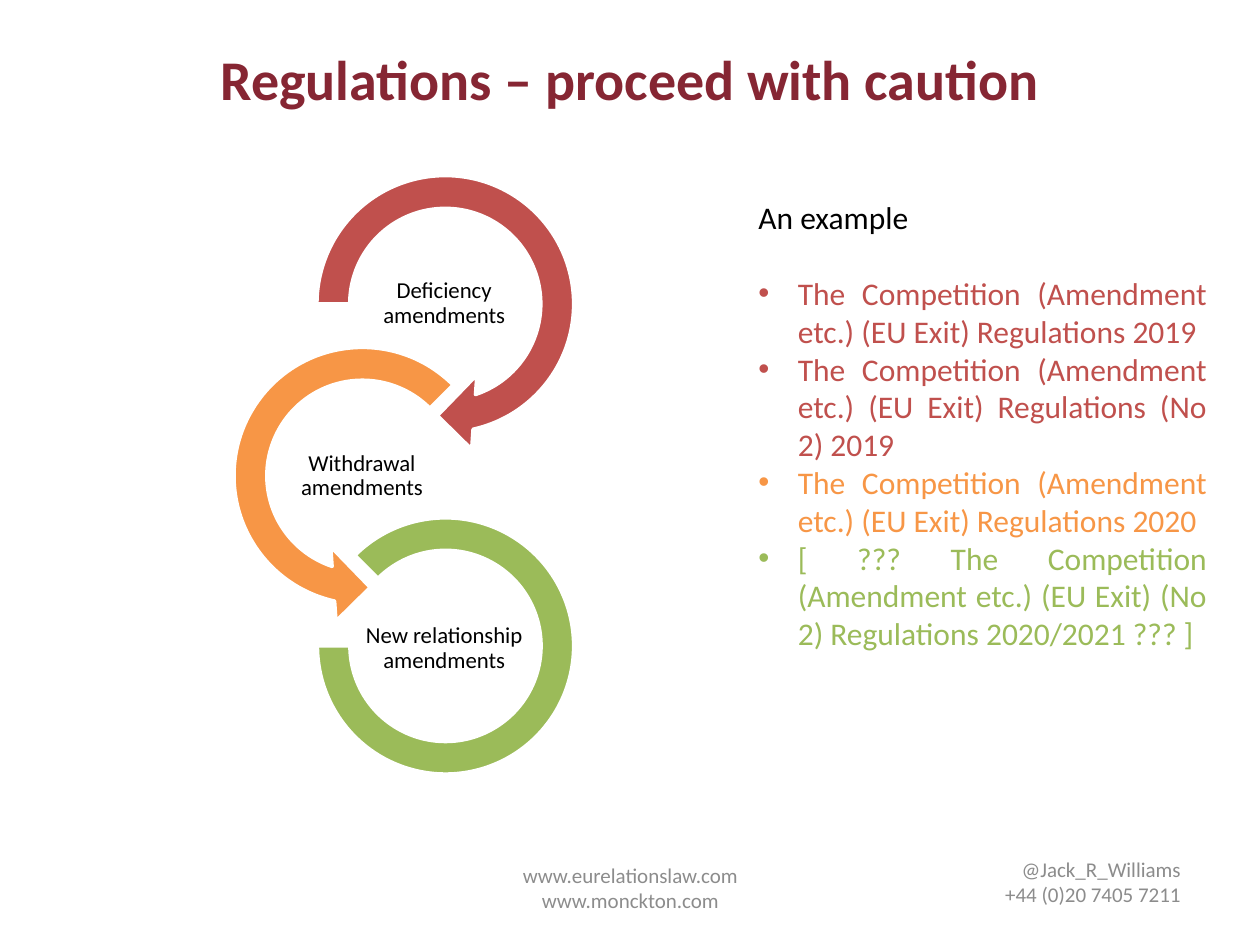
from lxml.etree import SubElement
from pptx import Presentation
from pptx.dml.color import RGBColor
from pptx.enum.shapes import MSO_SHAPE
from pptx.enum.text import MSO_ANCHOR, MSO_AUTO_SIZE, PP_ALIGN
from pptx.oxml.ns import qn
from pptx.util import Pt

FONT = "Calibri"
MAROON = RGBColor(0x86, 0x26, 0x33)
RED = RGBColor(0xC0, 0x50, 0x4D)
ORANGE = RGBColor(0xF7, 0x96, 0x46)
GREEN = RGBColor(0x9B, 0xBB, 0x59)
GREY = RGBColor(0x8C, 0x8C, 0x8C)
BLACK = RGBColor(0, 0, 0)
WHITE = RGBColor(0xFF, 0xFF, 0xFF)

LABEL_TOP, LABEL_STEP = 149.8, 98.6
STAGES = [
    ("Deficiency amendments", 206.6, MSO_SHAPE.CIRCULAR_ARROW, RED,
     (169.2, 88.4, 170.6), (0.11, 11.42, 45, 108, 0.125)),
    ("Withdrawal amendments", 159.6, MSO_SHAPE.LEFT_CIRCULAR_ARROW, ORANGE,
     (121.8, 186.6, 170.6), (0.11, 11.42, 63, 189, 0.125)),
    ("New relationship amendments", 206.6, MSO_SHAPE.BLOCK_ARC, GREEN,
     (181.4, 295.9, 146.4), (135, 108, 0.127)),
]
REGULATIONS = [
    ("The Competition (Amendment etc.) (EU Exit) Regulations 2019", RED),
    ("The Competition (Amendment etc.) (EU Exit) Regulations (No 2) 2019", RED),
    ("The Competition (Amendment etc.) (EU Exit) Regulations 2020", ORANGE),
    ("[ ??? The Competition (Amendment etc.) (EU Exit) (No 2) "
     "Regulations 2020/2021 ??? ]", GREEN),
]


def place(shape, left, top, width, height):
    """Move and size a shape, in points."""
    shape.left, shape.top = Pt(left), Pt(top)
    shape.width, shape.height = Pt(width), Pt(height)


def format_paragraph(paragraph, size, color, alignment, bold=False):
    """Set the alignment and the look of every run."""
    paragraph.alignment = alignment
    for run in paragraph.runs:
        run.font.name = FONT
        run.font.size = Pt(size)
        run.font.bold = bold
        run.font.color.rgb = color


def set_bullet(paragraph, character=None, indent=0):
    """Give a paragraph a hanging bullet, or none."""
    properties = paragraph._p.get_or_add_pPr()
    properties.set("marL", str(Pt(indent)))
    properties.set("indent", str(-Pt(indent)))
    if character:
        SubElement(properties, qn("a:buFont")).set("typeface", "Arial")
        SubElement(properties, qn("a:buChar")).set("char", character)
    else:
        SubElement(properties, qn("a:buNone"))


def add_text(shapes, text, box, size, color, alignment):
    """Add a wrapped, vertically centred text box."""
    text_box = shapes.add_textbox(*map(Pt, box))
    frame = text_box.text_frame
    frame.word_wrap = True
    frame.vertical_anchor = MSO_ANCHOR.MIDDLE
    frame.text = text
    for paragraph in frame.paragraphs:
        format_paragraph(paragraph, size, color, alignment)
    return frame


def add_ring(shapes, kind, color, box, adjustments):
    """Add one ring segment of the chain."""
    left, top, size = box
    ring = shapes.add_shape(kind, Pt(left), Pt(top), Pt(size), Pt(size))
    for index, value in enumerate(adjustments):
        ring.adjustments[index] = value
    ring.shadow.inherit = False
    ring.fill.solid()
    ring.fill.fore_color.rgb = color
    ring.line.color.rgb = WHITE
    ring.line.width = Pt(2)


def add_chain(slide):
    """Add the three linked rings with their labels."""
    shapes = slide.shapes.add_group_shape().shapes
    for index, (label, left, kind, color, box, adjustments) in enumerate(STAGES):
        add_ring(shapes, kind, color, box, adjustments)
        label_box = (left, LABEL_TOP + index * LABEL_STEP, 94.4, 47.2)
        frame = add_text(shapes, label, label_box, 13, BLACK, PP_ALIGN.CENTER)
        frame.margin_left = frame.margin_right = Pt(0.7)
        frame.margin_top = frame.margin_bottom = Pt(0.7)
        frame.paragraphs[0].line_spacing = 0.9


def fill_title(title):
    """Fill the title placeholder."""
    place(title, 36, 21.6, 648, 90)
    title.text_frame.text = "Regulations – proceed with caution"
    title.text_frame.vertical_anchor = MSO_ANCHOR.TOP
    format_paragraph(title.text_frame.paragraphs[0], 32, MAROON,
                     PP_ALIGN.CENTER, bold=True)


def fill_examples(body):
    """Fill the body placeholder with the list of regulations."""
    place(body, 426.2, 109.4, 270.7, 334)
    frame = body.text_frame
    frame.auto_size = MSO_AUTO_SIZE.NONE
    heading = frame.paragraphs[0]
    heading.text = "An example"
    heading.space_before = Pt(0)
    set_bullet(heading)
    format_paragraph(heading, 18, BLACK, PP_ALIGN.LEFT)
    for index, (text, color) in enumerate(REGULATIONS):
        paragraph = frame.add_paragraph()
        paragraph.text = text
        paragraph.space_before = Pt(0 if index else 22)
        set_bullet(paragraph, "•", 22.5)
        format_paragraph(paragraph, 18, color, PP_ALIGN.JUSTIFY)


def main():
    """Build and save the slide."""
    presentation = Presentation()
    presentation.slide_width, presentation.slide_height = Pt(720), Pt(540)
    slide = presentation.slides.add_slide(presentation.slide_layouts[1])
    fill_title(slide.shapes.title)
    add_chain(slide)
    fill_examples(slide.placeholders[1])
    add_text(slide.shapes, "www.eurelationslaw.com\nwww.monckton.com",
             (246.2, 485.3, 228.2, 43.9), 12, GREY, PP_ALIGN.CENTER)
    add_text(slide.shapes, "@Jack_R_Williams\n+44 (0)20 7405 7211",
             (514.1, 479.5, 167.8, 48.2), 12, GREY, PP_ALIGN.RIGHT)
    presentation.save("out.pptx")


if __name__ == "__main__":
    main()
